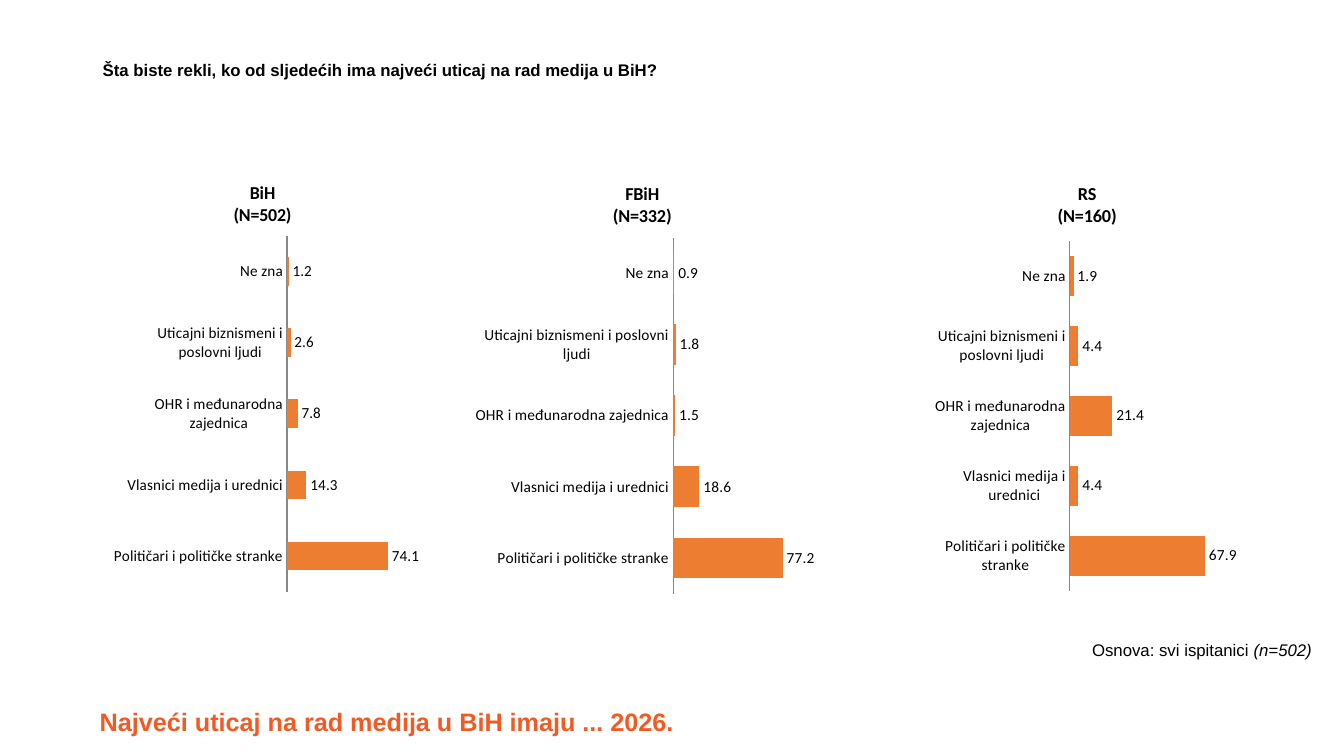
from dataclasses import dataclass

from lxml import etree
from pptx import Presentation
from pptx import util as u
from pptx.chart.data import CategoryChartData
from pptx.dml.color import RGBColor
from pptx.enum import chart as ch, text
from pptx.oxml.ns import qn

PX = 9144  # one px is a hundredth of an inch
HUES = {"ink": "000000", "bar": "ED7D31", "axis": "888888", "head": "F15A23"}
CATS = [
    "Političari i političke stranke",
    "Vlasnici medija i urednici",
    "OHR i međunarodna zajednica",
    "Uticajni biznismeni i poslovni ljudi",
    "Ne zna",
]
Box = tuple[int, int, int, int]


@dataclass
class Note:
    box: Box
    runs: list[tuple[str, bool]]  # wording, italic
    size: int = 12
    hue: str = "ink"
    bold: bool = False
    align: text.PP_ALIGN = text.PP_ALIGN.LEFT


@dataclass
class Panel:
    name: str
    base: int
    box: Box
    plot: Box  # within the panel
    title: tuple[int, int]  # within the panel
    vals: list[float]
    gap: int = 75
    form: str = "0.0"


NOTES = [
    Note((89, 696, 952, 40),
         [("Najveći uticaj na rad medija u BiH imaju ... 2026.", False)],
         size=18, hue="head", bold=True),
    Note((92, 630, 1219, 50),
         [("Osnova: svi ispitanici ", False), ("(n=502)", True)],
         align=text.PP_ALIGN.RIGHT),
    Note((92, 54, 1123, 30),
         [("Šta biste rekli, ko od sljedećih ima najveći uticaj na rad medija u BiH?", False)],
         bold=True),
]
PANELS = [
    Panel("BiH", 502, (113, 156, 303, 441), (171, 78, 110, 353), (114, 20),
          [74.1, 14.3, 7.8, 2.6, 1.2], gap=150, form="###0.0"),
    Panel("FBiH", 332, (469, 157, 339, 441), (199, 79, 113, 353), (136, 20),
          [77.2, 18.6, 1.5, 1.8, 0.9]),
    Panel("RS", 160, (913, 157, 328, 472), (148, 82, 158, 347), (133, 20),
          [67.9, 4.4, 21.4, 4.4, 1.9]),
]


def scale(box: Box) -> list[int]:
    return [n * PX for n in box]


def style(font, size: int, face: str, hue: str = "ink", bold: bool = False) -> None:
    font.size, font.name, font.bold = u.Pt(size), face, bold
    font.color.rgb = RGBColor.from_string(HUES[hue])


def place(node, spot: tuple[int, ...], box: Box, after: str = "") -> None:
    """Give a chart part a fixed place, as shares of the chart box."""
    for old in node.findall(qn("c:layout")):
        node.remove(old)
    layout = etree.Element(qn("c:layout"))
    node.insert(node.index(node.find(qn(after))) + 1 if after else 0, layout)
    manual = etree.SubElement(layout, qn("c:manualLayout"))
    parts = [("xMode", "edge"), ("yMode", "edge")]
    if len(spot) == 4:
        parts.insert(0, ("layoutTarget", "inner"))
    parts += [(key, str(n / box[2 + i % 2]))
              for i, (key, n) in enumerate(zip("xywh", spot))]
    for tag, val in parts:
        etree.SubElement(manual, qn(f"c:{tag}")).set("val", val)


def add_note(slide, note: Note) -> None:
    frame = slide.shapes.add_textbox(*scale(note.box)).text_frame
    frame.word_wrap = True
    para = frame.paragraphs[0]
    para.alignment = note.align
    style(para.font, note.size, "Arial", note.hue, note.bold)
    for words, slant in note.runs:
        run = para.add_run()
        run.text = words
        if slant:
            run.font.italic = True


def add_panel(slide, panel: Panel) -> None:
    data = CategoryChartData(number_format=panel.form)
    data.categories = CATS
    data.add_series("Series 1", panel.vals)
    chart = slide.shapes.add_chart(
        ch.XL_CHART_TYPE.BAR_CLUSTERED, *scale(panel.box), data).chart
    chart.has_legend = False
    style(chart.font, 11, "Calibri")

    # Title
    chart.has_title = True
    title = chart.chart_title
    title.text_frame.text = f"{panel.name}\n(N={panel.base})"
    for para in title.text_frame.paragraphs:
        style(para.font, 13, "Calibri", bold=True)
    place(title._element, panel.title, panel.box, "c:tx")

    # Axes
    cat, val = chart.category_axis, chart.value_axis
    cat.major_tick_mark = cat.minor_tick_mark = ch.XL_TICK_MARK.NONE
    cat.format.line.color.rgb = RGBColor.from_string(HUES["axis"])
    cat.format.line.width = u.Pt(0.75)
    style(cat.tick_labels.font, 11, "Calibri")
    val.minimum_scale, val.maximum_scale = 0, 80
    val.has_major_gridlines = val.visible = False

    # Bars and labels
    plot = chart.plots[0]
    plot.gap_width, plot.overlap = panel.gap, -25
    plot.vary_by_categories = False
    fill = plot.series[0].format.fill
    fill.solid()
    fill.fore_color.rgb = RGBColor.from_string(HUES["bar"])
    plot.has_data_labels = True
    labels = plot.data_labels
    labels.show_value = True
    labels.position = ch.XL_LABEL_POSITION.OUTSIDE_END
    labels.number_format, labels.number_format_is_linked = panel.form, False
    style(labels.font, 11, "Calibri")
    place(chart._chartSpace.chart.plotArea, panel.plot, panel.box)


def main() -> None:
    deck = Presentation()
    deck.slide_width, deck.slide_height = 1333 * PX, 750 * PX
    slide = deck.slides.add_slide(deck.slide_layouts[6])
    for note in NOTES:
        add_note(slide, note)
    for panel in PANELS:
        add_panel(slide, panel)
    deck.save("out.pptx")


if __name__ == "__main__":
    main()
